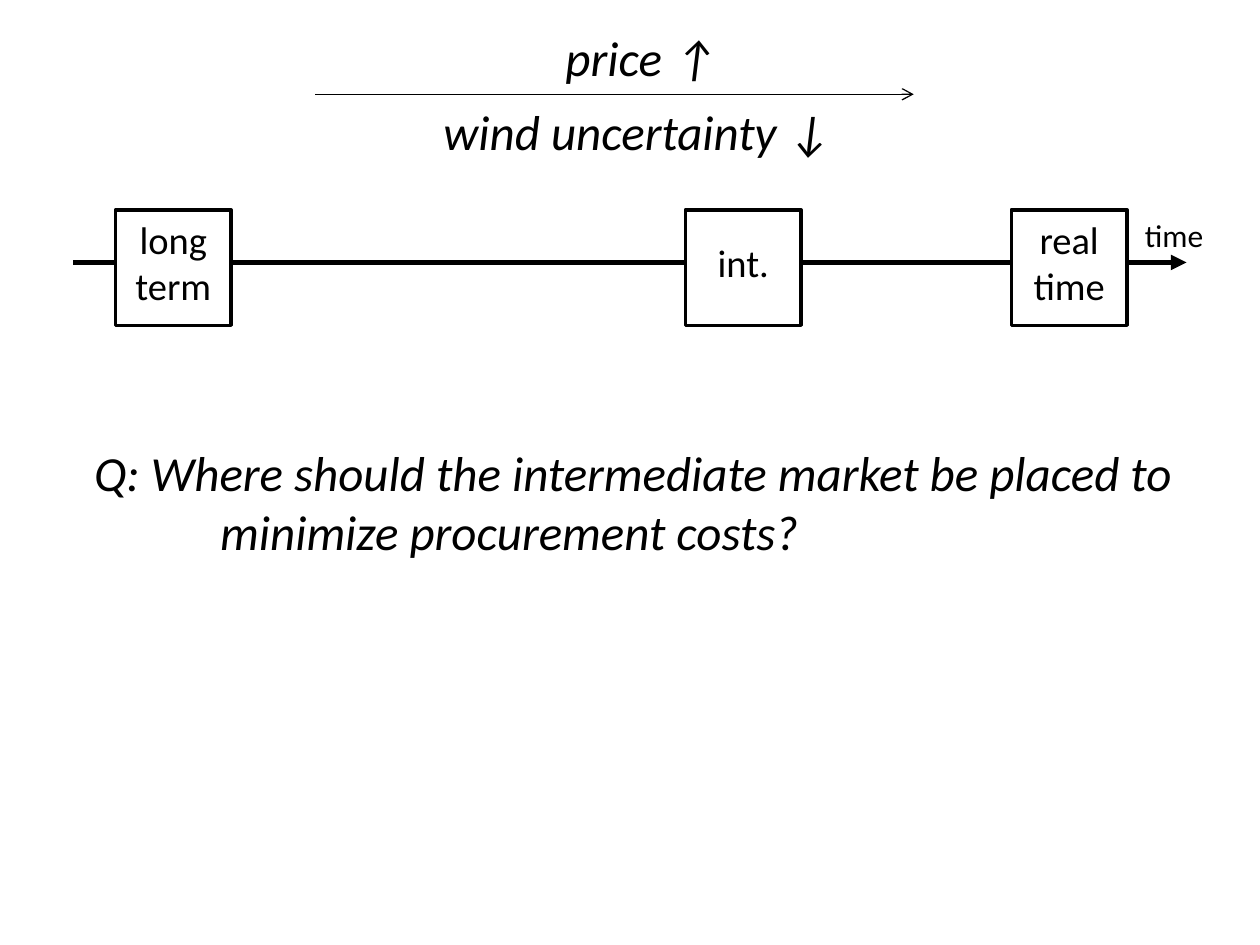
from dataclasses import dataclass

from lxml.etree import SubElement
from pptx import Presentation
from pptx.dml.color import RGBColor
from pptx.enum.shapes import MSO_CONNECTOR, MSO_SHAPE
from pptx.enum.text import MSO_ANCHOR, PP_ALIGN
from pptx.oxml.ns import qn
from pptx.util import Cm, Pt

FONT = "Calibri"
BLACK, WHITE = "000000", "FFFFFF"
BOX_TOP, BOX_SIDE = 4.23, 2.33
AXIS_Y = 5.29
LABEL_WIDTH = 2.7


@dataclass
class Market:
    lines: list[str]
    left: float
    label_top: float
    label_height: float


@dataclass
class Arrow:
    start: float
    end: float
    y: float
    weight: float
    head: str


@dataclass
class Label:
    lines: list[str]
    left: float
    top: float
    width: float
    height: float
    size: int
    italic: bool = False
    align: PP_ALIGN = PP_ALIGN.LEFT
    wrap: bool = False


def color(value: str) -> RGBColor:
    return RGBColor.from_string(value)


def draw_arrow(s, arrow: Arrow) -> None:
    line = s.shapes.add_connector(MSO_CONNECTOR.STRAIGHT, Cm(arrow.start), Cm(arrow.y),
                                  Cm(arrow.end), Cm(arrow.y))
    line.line.color.rgb = color(BLACK)
    line.line.width = Pt(arrow.weight)
    SubElement(line.line._get_or_add_ln(), qn("a:tailEnd"), type=arrow.head)
    SubElement(line._element.spPr, qn("a:effectLst"))


def draw_label(s, label: Label):
    sp = s.shapes.add_textbox(Cm(label.left), Cm(label.top), Cm(label.width), Cm(label.height))
    tf = sp.text_frame
    tf.word_wrap = label.wrap
    tf.vertical_anchor = MSO_ANCHOR.TOP
    for i, text in enumerate(label.lines):
        p = tf.paragraphs[0] if i == 0 else tf.add_paragraph()
        p.alignment = label.align
        r = p.add_run()
        r.text = text
        r.font.name = FONT
        r.font.size = Pt(label.size)
        r.font.italic = label.italic
        r.font.color.rgb = color(BLACK)
    return sp


def draw_market(s, market: Market) -> None:
    sp = s.shapes.add_shape(MSO_SHAPE.RECTANGLE, Cm(market.left), Cm(BOX_TOP),
                            Cm(BOX_SIDE), Cm(BOX_SIDE))
    sp.shadow.inherit = False
    sp.fill.solid()
    sp.fill.fore_color.rgb = color(WHITE)
    sp.line.color.rgb = color(BLACK)
    sp.line.width = Pt(2)
    label_left = market.left + (BOX_SIDE - LABEL_WIDTH) / 2
    draw_label(s, Label(market.lines, label_left, market.label_top, LABEL_WIDTH,
                        market.label_height, 22, align=PP_ALIGN.CENTER, wrap=True))


def main() -> None:
    prs = Presentation()
    prs.slide_width, prs.slide_height = Cm(25.4), Cm(19.05)
    s = prs.slides.add_slide(prs.slide_layouts[6])

    # Trend arrow with its two captions
    draw_arrow(s, Arrow(6.35, 18.42, 1.9, 0.75, "arrow"))
    draw_label(s, Label(["price ↑"], 11.15, 0.43, 3.66, 1.45, 28, italic=True))
    draw_label(s, Label(["wind uncertainty ↓"], 8.69, 1.93, 8.51, 1.45, 28, italic=True))

    # Time axis, running behind the markets
    draw_arrow(s, Arrow(1.48, 23.92, AXIS_Y, 3, "triangle"))
    draw_label(s, Label(["time"], 22.83, 4.23, 1.7, 1.02, 18))

    # Markets
    for market in (
        Market(["int."], 13.82, 4.7, 1.19),
        Market(["real", "time"], 20.39, 4.23, 2.13),
        Market(["long", "term"], 2.33, 4.23, 2.13),
    ):
        draw_market(s, market)

    # Question, with its second line indented
    question = draw_label(s, Label(
        ["Q: Where should the intermediate market be placed to", "minimize procurement costs?"],
        1.65, 8.79, 22.68, 2.64, 28, italic=True, wrap=True))
    pPr = question.text_frame.paragraphs[1]._p.get_or_add_pPr()
    pPr.set("marL", str(Cm(2.54)))
    pPr.set("indent", "0")

    prs.save("out.pptx")


if __name__ == "__main__":
    main()
